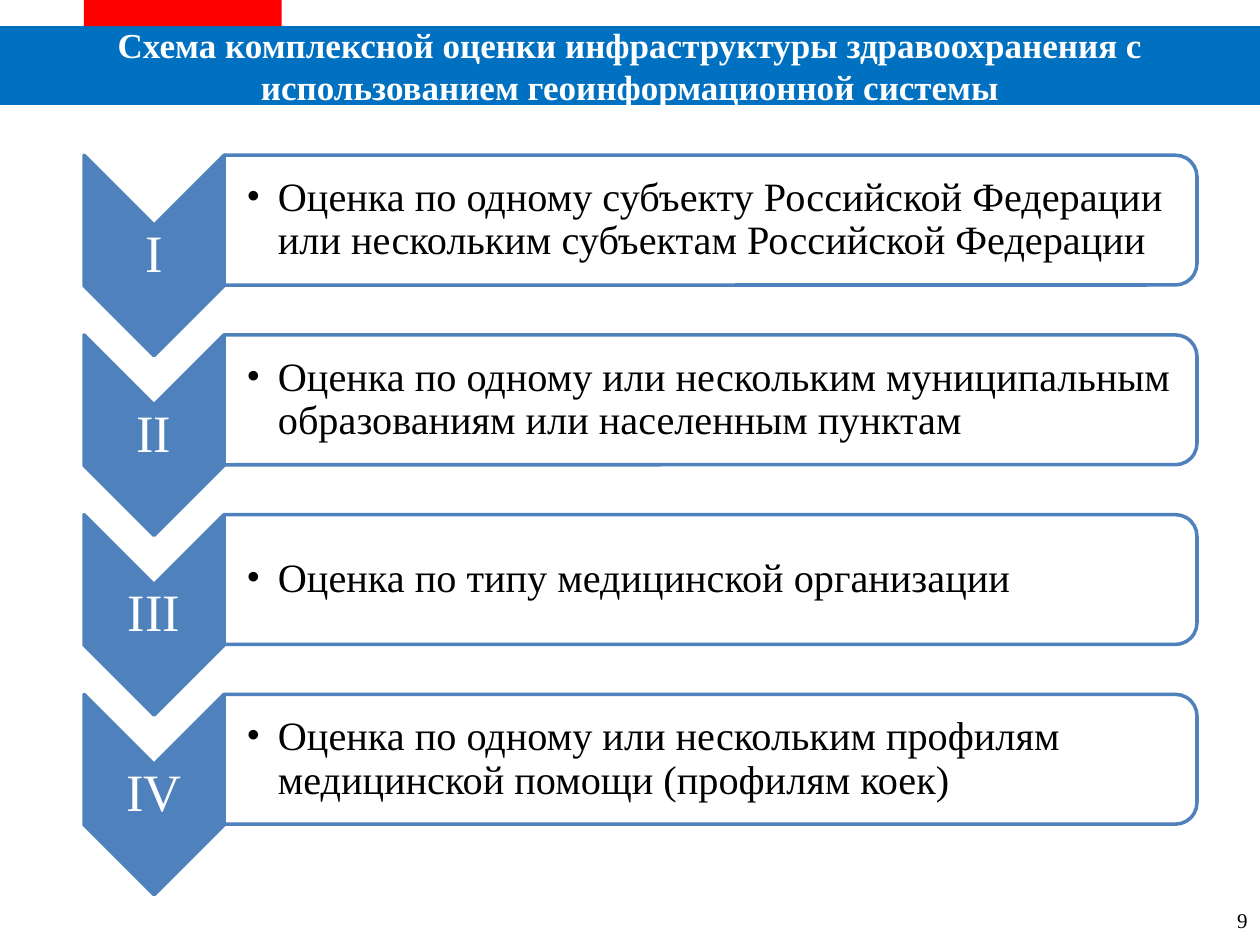
from dataclasses import dataclass

from lxml import etree
from pptx import Presentation
from pptx.dml.color import RGBColor
from pptx.enum.shapes import MSO_SHAPE
from pptx.enum.text import MSO_ANCHOR, MSO_AUTO_SIZE, PP_ALIGN
from pptx.oxml.ns import qn
from pptx.util import Pt

RECTANGLE = MSO_SHAPE.RECTANGLE
CHEVRON = MSO_SHAPE.CHEVRON
ROUNDED_PANEL = MSO_SHAPE.ROUND_2_SAME_RECTANGLE
MIDDLE = MSO_ANCHOR.MIDDLE
NO_AUTOFIT = MSO_AUTO_SIZE.NONE
LEFT, CENTER, RIGHT = PP_ALIGN.LEFT, PP_ALIGN.CENTER, PP_ALIGN.RIGHT


@dataclass(frozen=True)
class Theme:
    font: str = "Times New Roman"
    banner: RGBColor = RGBColor(0x00, 0x70, 0xC0)
    tab: RGBColor = RGBColor(0xFF, 0x00, 0x00)
    accent: RGBColor = RGBColor(0x4F, 0x81, 0xBD)
    white: RGBColor = RGBColor(0xFF, 0xFF, 0xFF)
    black: RGBColor = RGBColor(0x00, 0x00, 0x00)
    title_size: int = 20
    numeral_size: int = 30
    body_size: int = 23
    page_size: int = 12


theme = Theme()


def add_block(kind, left, top, width, height, fill, line=None, rotation=0):
    shape = slide.shapes.add_shape(kind, Pt(left), Pt(top), Pt(width), Pt(height))
    shape.shadow.inherit = False
    shape.rotation = rotation
    shape.fill.solid()
    shape.fill.fore_color.rgb = fill
    if line is None:
        shape.line.fill.background()
    else:
        shape.line.color.rgb = line
        shape.line.width = Pt(2)
    return shape


def write_text(shape, text, size, color, alignment, margins, bold=False, bullet=False):
    frame = shape.text_frame
    frame.word_wrap = True
    frame.auto_size = NO_AUTOFIT
    frame.vertical_anchor = MIDDLE
    frame.margin_left, frame.margin_top, frame.margin_right, frame.margin_bottom = map(Pt, margins)
    frame.text = text
    paragraph = frame.paragraphs[0]
    paragraph.alignment = alignment
    if bullet:
        properties = paragraph._p.get_or_add_pPr()
        properties.set("marL", str(Pt(18)))
        properties.set("indent", str(-Pt(18)))
        etree.SubElement(properties, qn("a:buFont")).set("typeface", theme.font)
        etree.SubElement(properties, qn("a:buChar")).set("char", "•")
    paragraph.font.name = theme.font
    paragraph.font.size = Pt(size)
    paragraph.font.bold = bold
    paragraph.font.color.rgb = color
    return paragraph


presentation = Presentation()
presentation.slide_width = Pt(720)
presentation.slide_height = Pt(540)
slide = presentation.slides.add_slide(presentation.slide_layouts[5])

title = slide.shapes.title
title.left, title.top, title.width, title.height = Pt(0), Pt(15), Pt(720), Pt(45)
title.fill.solid()
title.fill.fore_color.rgb = theme.banner
write_text(
    title,
    "Схема комплексной оценки инфраструктуры здравоохранения с использованием геоинформационной системы",
    theme.title_size, theme.white, CENTER, (7.2, 3.6, 7.2, 3.6), bold=True,
)
add_block(RECTANGLE, 48, 0, 113, 15, theme.tab)

page_number = slide.shapes.add_textbox(Pt(561.6), Pt(511.2), Pt(158.4), Pt(28.8))
write_text(page_number, "9", theme.page_size, theme.black, RIGHT, (7.2, 3.6, 7.2, 3.6))

steps = [
    ("I", "Оценка по одному субъекту Российской Федерации или нескольким субъектам Российской Федерации"),
    ("II", "Оценка по одному или нескольким муниципальным образованиям или населенным пунктам"),
    ("III", "Оценка по типу медицинской организации"),
    ("IV", "Оценка по одному или нескольким профилям медицинской помощи (профилям коек)"),
]
column_left, column_width = 48, 80
panel_left, panel_width, panel_height = 128, 556, 74.2
chevron_length = 114.5
numeral_height, description_height = 34.5, 67
first_middle, pitch = 125.8, 102.7

for index, (numeral, description) in enumerate(steps):
    middle = first_middle + index * pitch
    chevron_middle = middle + (chevron_length - panel_height) / 2
    add_block(
        CHEVRON, column_left + (column_width - chevron_length) / 2, chevron_middle - column_width / 2,
        chevron_length, column_width, theme.accent, theme.accent, rotation=90,
    )
    numeral_box = slide.shapes.add_textbox(
        Pt(column_left), Pt(chevron_middle - numeral_height / 2), Pt(column_width), Pt(numeral_height))
    paragraph = write_text(
        numeral_box, numeral, theme.numeral_size, theme.white, CENTER, (1.5, 1.5, 1.5, 1.5))
    paragraph.line_spacing = 0.9

    panel = add_block(
        ROUNDED_PANEL, panel_left + (panel_width - panel_height) / 2, middle - panel_width / 2,
        panel_height, panel_width, theme.white, theme.accent, rotation=90,
    )
    fill_color = panel.fill._xPr.find(qn("a:solidFill"))[0]
    etree.SubElement(fill_color, qn("a:alpha")).set("val", "90000")

    description_box = slide.shapes.add_textbox(
        Pt(panel_left), Pt(middle - description_height / 2), Pt(552.4), Pt(description_height))
    paragraph = write_text(
        description_box, description, theme.body_size, theme.black, LEFT,
        (12.8, 1.5, 1.5, 1.5), bullet=True)
    paragraph.line_spacing = 0.9

presentation.save("out.pptx")
